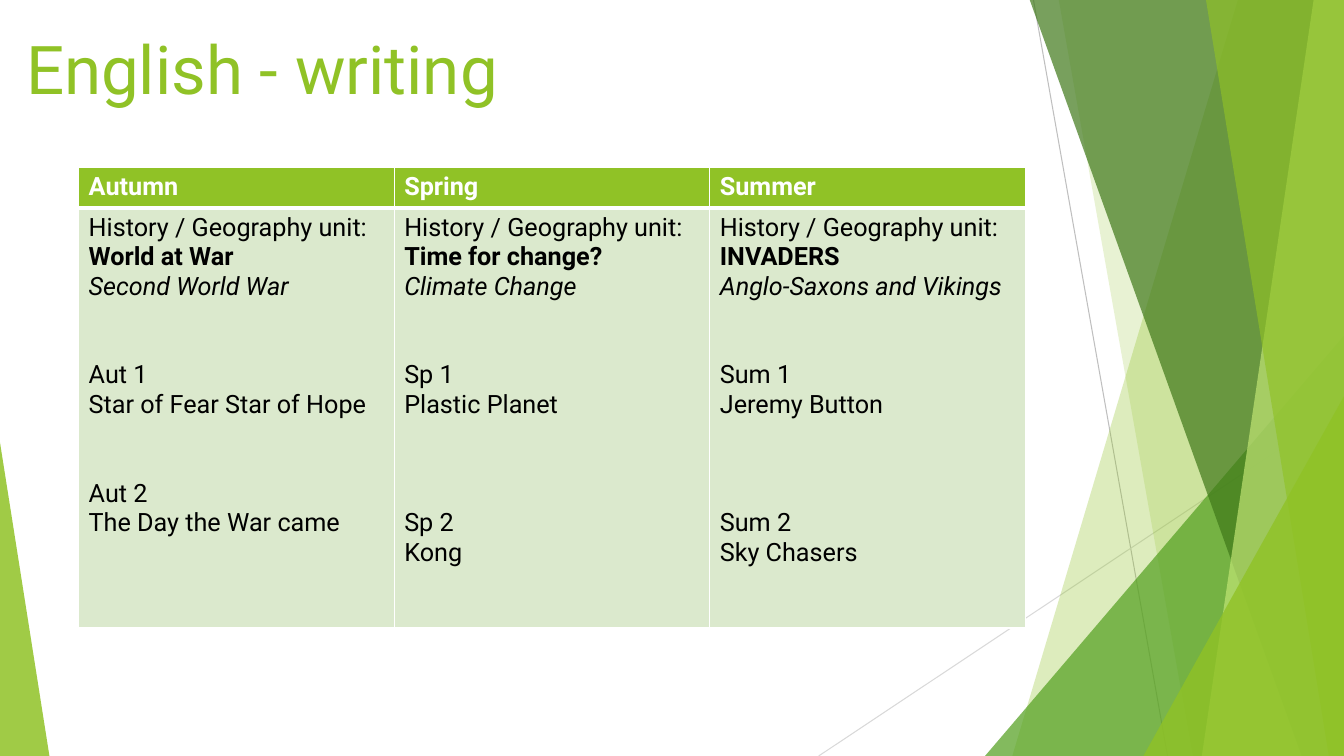
from lxml.etree import SubElement
from pptx import Presentation
from pptx.dml.color import RGBColor
from pptx.enum.shapes import MSO_CONNECTOR, MSO_SHAPE
from pptx.enum.text import MSO_ANCHOR
from pptx.oxml import parse_xml
from pptx.oxml.ns import nsdecls, qn
from pptx.util import Inches, Pt

WIDTH, HEIGHT = 13.33, 7.5
BLEED_TOP = -0.01
FONT = "Roboto"
COLOURS = {
    "lime": "90C226", "green": "54A021", "forest": "3F7819", "pale lime": "C0E474",
    "cell": "DBE9CD", "white": "FFFFFF", "black": "000000",
    "grey": "BFBFBF", "light grey": "D9D9D9",
}

TITLE = "English - writing"
UNIT = "History / Geography unit: "
# term, unit name, topic, then (half term, book, blank lines above)
TERMS = [
    ("Autumn", "World at War", "Second World War",
     [("Aut 1", "Star of Fear Star of Hope", 2), ("Aut 2", "The Day the War came", 2)]),
    ("Spring", "Time for change?", "Climate Change",
     [("Sp 1", "Plastic Planet", 2), ("Sp 2", "Kong", 3)]),
    ("Summer", "INVADERS", "Anglo-Saxons and Vikings",
     [("Sum 1", "Jeremy Button", 2), ("Sum 2", "Sky Chasers", 3)]),
]
TABLE_LEFT, TABLE_TOP, COLUMN_WIDTH = 0.78, 1.66, 3.13
ROW_HEIGHTS = [0.4, 4.17]
TEXT_SIZE, LINE_PITCH = 18, 21.1
THIN, THICK = 1, 3

# from, to, colour
LINES = [
    ((10.25, 0), (11.58, HEIGHT), "grey"),
    ((WIDTH, 4.03), (8.12, HEIGHT), "light grey"),
]
# Bands reach the right edge: ("band", left at top, left at bottom, colour, opacity)
# Triangles stand on the bottom edge: ("triangle", left, width, height, apex, colour, opacity)
DECORATION = [
    ("band", 12.28, 10.04, "lime", 30),
    ("band", 10.5, 11.83, "lime", 20),
    ("triangle", 9.77, 3.56, 4.17, 1, "green", 72),
    ("band", 10.21, 12.91, "forest", 70),
    ("band", 13.03, 11.92, "pale lime", 70),
    ("band", 11.96, 13.18, "lime", 65),
    ("triangle", 11.34, 1.99, 3.57, 1, "lime", 80),
    ("triangle", 0, 0.49, 3.11, 0, "lime", 85),
]


def rgb(name):
    return RGBColor.from_string(COLOURS[name])


def paint(shape, colour, opacity):
    shape.shadow.inherit = False
    shape.line.fill.background()
    shape.fill.solid()
    shape.fill.fore_color.rgb = rgb(colour)
    colour_element = shape.fill._xPr.find(qn("a:solidFill"))[0]
    SubElement(colour_element, qn("a:alpha")).set("val", str(opacity * 1000))


def add_line(slide, start, end, colour):
    ends = [Inches(value) for value in (*start, *end)]
    connector = slide.shapes.add_connector(MSO_CONNECTOR.STRAIGHT, *ends)
    connector.line.color.rgb = rgb(colour)
    connector.line.width = Pt(0.75)
    SubElement(connector._element.spPr, qn("a:effectLst"))


def add_band(slide, top_left, bottom_left, colour, opacity):
    corners = [(top_left, BLEED_TOP), (WIDTH, BLEED_TOP),
               (WIDTH, HEIGHT), (bottom_left, HEIGHT)]
    points = [(Inches(x), Inches(y)) for x, y in corners]
    builder = slide.shapes.build_freeform(*points[0])
    builder.add_line_segments(points[1:], close=True)
    paint(builder.convert_to_shape(), colour, opacity)


def add_triangle(slide, left, width, height, apex, colour, opacity):
    triangle = slide.shapes.add_shape(
        MSO_SHAPE.ISOSCELES_TRIANGLE, Inches(left), Inches(HEIGHT - height),
        Inches(width), Inches(height))
    triangle.adjustments[0] = apex
    paint(triangle, colour, opacity)


def add_run(paragraph, text, size, colour, bold=False, italic=False):
    run = paragraph.add_run()
    run.text = text
    font = run.font
    font.name, font.size, font.bold, font.italic = FONT, Pt(size), bold, italic
    font.color.rgb = rgb(colour)


def style_cell(cell, colour, top, bottom):
    """Fill a cell and give it white borders; top and bottom are widths in points."""
    cell.fill.solid()
    cell.fill.fore_color.rgb = rgb(colour)
    properties = cell._tc.get_or_add_tcPr()
    borders = [("lnL", THIN), ("lnR", THIN), ("lnT", top), ("lnB", bottom)]
    for index, (side, width) in enumerate(borders):
        properties.insert(index, parse_xml(
            f'<a:{side} {nsdecls("a")} w="{Pt(width)}"><a:solidFill>'
            f'<a:srgbClr val="{COLOURS["white"]}"/></a:solidFill></a:{side}>'))


def write_plan(frame, unit_name, topic, halves):
    first = frame.paragraphs[0]
    add_run(first, UNIT, TEXT_SIZE, "black")
    add_run(first, unit_name, TEXT_SIZE, "black", bold=True)
    add_run(frame.add_paragraph(), topic, TEXT_SIZE, "black", italic=True)
    for half_term, book, blank_lines in halves:
        heading = frame.add_paragraph()
        heading.space_before = Pt(blank_lines * LINE_PITCH)
        add_run(heading, half_term, TEXT_SIZE, "black")
        add_run(frame.add_paragraph(), book, TEXT_SIZE, "black")


def add_term_table(slide):
    table = slide.shapes.add_table(
        len(ROW_HEIGHTS), len(TERMS), Inches(TABLE_LEFT), Inches(TABLE_TOP),
        Inches(COLUMN_WIDTH * len(TERMS)), Inches(sum(ROW_HEIGHTS))).table
    for row, height in zip(table.rows, ROW_HEIGHTS):
        row.height = Inches(height)
    for index, (term, unit_name, topic, halves) in enumerate(TERMS):
        table.columns[index].width = Inches(COLUMN_WIDTH)
        header, body = table.cell(0, index), table.cell(1, index)
        style_cell(header, "lime", THIN, THICK)
        style_cell(body, "cell", THICK, THIN)
        add_run(header.text_frame.paragraphs[0], term, TEXT_SIZE, "white", bold=True)
        write_plan(body.text_frame, unit_name, topic, halves)


def main():
    presentation = Presentation()
    presentation.slide_width, presentation.slide_height = Inches(WIDTH), Inches(HEIGHT)
    slide = presentation.slides.add_slide(presentation.slide_layouts[6])
    for start, end, colour in LINES:
        add_line(slide, start, end, colour)
    builders = {"band": add_band, "triangle": add_triangle}
    for kind, *values in DECORATION:
        builders[kind](slide, *values)

    title = slide.shapes.add_textbox(Inches(0.16), Inches(0.22), Inches(9.4), Inches(1.44))
    title.text_frame.word_wrap = True
    title.text_frame.vertical_anchor = MSO_ANCHOR.TOP
    add_run(title.text_frame.paragraphs[0], TITLE, 48, "lime")
    add_term_table(slide)
    presentation.save("out.pptx")


if __name__ == "__main__":
    main()
